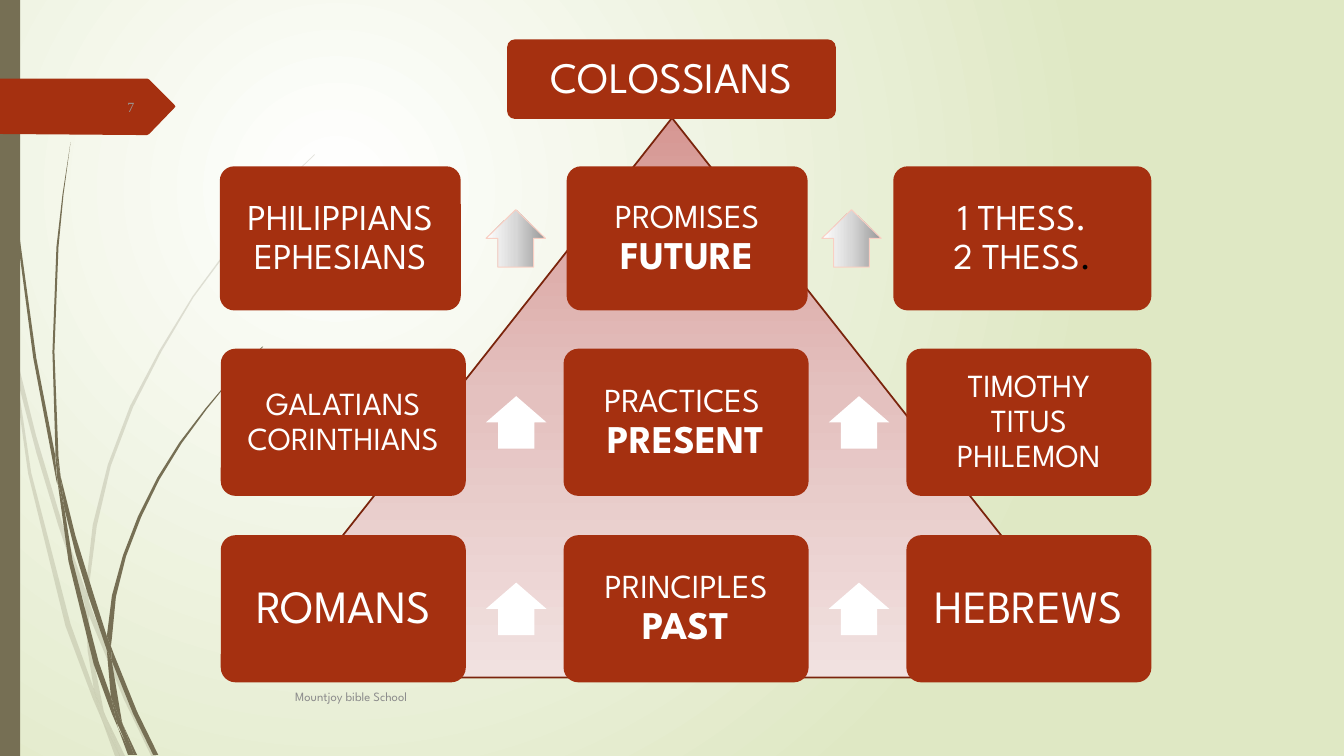
from dataclasses import dataclass

from lxml.etree import SubElement
from pptx import Presentation
from pptx.dml.color import RGBColor
from pptx.enum.shapes import MSO_SHAPE
from pptx.enum.text import MSO_ANCHOR, PP_ALIGN
from pptx.oxml.ns import qn
from pptx.util import Inches, Pt

RUST = RGBColor(0xA5, 0x30, 0x10)
DARK_RUST = RGBColor(0x7A, 0x24, 0x0C)
PEACH = RGBColor(0xF9, 0xCF, 0xC3)
OLIVE = RGBColor(0x76, 0x6F, 0x54)
WHITE = RGBColor(0xFF, 0xFF, 0xFF)
BLACK = RGBColor(0, 0, 0)
FOOTER_GREY = RGBColor(0x8C, 0x8C, 0x8C)
NUMBER_GREY = RGBColor(0x9B, 0x9A, 0x98)
PALE_GREEN = RGBColor(0xDF, 0xE8, 0xC4)
PINKS = [RGBColor(0xD6, 0x97, 0x93), RGBColor(0xE4, 0xC1, 0xBF), RGBColor(0xF1, 0xE1, 0xE0)]
SILVERS = [RGBColor(0x97, 0x97, 0x97), RGBColor(0xD7, 0xD7, 0xD7), WHITE]
FONT = "League Spartan"

PALE_WISPS = [
    [(0.11, 3.5), (0.09, 3.22), (0, 2.82), (0, 2.99), (0.1, 3.44)],
    [(0.58, 5.22), (0.84, 5.99), (0.85, 5.86), (0.62, 5.2), (0.36, 4.33), (0.14, 3.45),
     (0.17, 3.76), (0.36, 4.49)],
    [(0.92, 6.07), (0.88, 5.96), (0.88, 6.1), (1.23, 6.94), (1.5, 7.5), (1.55, 7.5), (1.27, 6.92)],
    [(1.19, 7.5), (1.24, 7.5), (1.05, 7.11)],
    [(0.93, 6.83), (0.7, 6.19), (0.31, 4.69), (0.17, 3.76), (0.11, 3.5), (0.28, 4.7),
     (0.65, 6.21), (0.92, 6.93), (1.01, 7.14), (0.99, 7.07)],
    [(0.84, 5.99), (0.87, 6.46), (0.93, 6.83), (0.96, 6.92), (1.05, 7.11), (1.03, 7.06),
     (0.91, 6.46), (0.88, 6.1), (0.88, 6.08)],
    [(0.88, 5.84), (0.96, 5.22), (1.1, 4.62), (1.32, 4.04), (1.6, 3.49), (1.92, 2.95),
     (2.29, 2.45), (2.68, 1.98), (2.9, 1.75), (3.12, 1.54), (3.12, 1.53), (2.89, 1.75),
     (2.68, 1.97), (2.28, 2.44), (1.91, 2.94), (1.58, 3.48), (1.29, 4.03), (1.07, 4.61),
     (0.92, 5.21), (0.85, 5.84), (0.85, 5.86), (0.88, 5.96)],
    [(1.01, 7.14), (1.14, 7.5), (1.19, 7.5)],
    [(0.88, 6.08), (0.88, 6.1), (0.88, 5.96), (0.85, 5.86), (0.84, 5.99)],
    [(0.96, 6.92), (0.93, 6.83), (0.99, 7.07), (1.01, 7.14), (1.19, 7.5), (1.05, 7.11)],
]
DARK_WISPS = [
    [(0.07, 1.1), (0.17, 2.33), (0.33, 3.55), (0.56, 4.77), (0.57, 4.81), (0.55, 4.57),
     (0.55, 4.53), (0.36, 3.55), (0.19, 2.32), (0.08, 1.09), (0.05, 0.48), (0.04, 0),
     (0.03, 0), (0.04, 0.48)],
    [(0.88, 5.92), (1.06, 6.45), (1.06, 6.31), (0.93, 5.9), (0.75, 5.32), (0.6, 4.72),
     (0.64, 5.05), (0.75, 5.49)],
    [(1.13, 6.49), (1.1, 6.41), (1.11, 6.56), (1.32, 7.08), (1.52, 7.49), (1.57, 7.49), (1.36, 7.06)],
    [(1.1, 6.91), (0.98, 6.57), (0.72, 5.56), (0.64, 5.05), (0.57, 4.77), (0.68, 5.57),
     (0.93, 6.59), (1.11, 7.08), (1.17, 7.22), (1.16, 7.17)],
    [(0.6, 4.72), (0.58, 4.53), (0.54, 3.49), (0.58, 2.45), (0.63, 1.93), (0.7, 1.41),
     (0.62, 1.93), (0.56, 2.45), (0.52, 3.49), (0.55, 4.49)],
    [(1.33, 7.49), (1.36, 7.49), (1.22, 7.19)],
    [(0.57, 4.77), (0.64, 5.05), (0.6, 4.72), (0.55, 4.49), (0.55, 4.53)],
    [(1.11, 6.33), (1.15, 5.92), (1.25, 5.52), (1.4, 5.13), (1.58, 4.76), (1.8, 4.4),
     (2.05, 4.06), (2.31, 3.74), (2.61, 3.44), (2.6, 3.44), (2.31, 3.73), (2.04, 4.05),
     (1.78, 4.39), (1.56, 4.74), (1.37, 5.12), (1.22, 5.51), (1.11, 5.91), (1.06, 6.31),
     (1.1, 6.41)],
    [(1.17, 7.22), (1.27, 7.49), (1.31, 7.49)],
    [(1.06, 6.45), (1.1, 6.91), (1.16, 7.06), (1.22, 7.19), (1.21, 7.16), (1.11, 6.56)],
    [(1.06, 6.45), (1.11, 6.56), (1.1, 6.41), (1.06, 6.31)],
    [(1.16, 7.06), (1.1, 6.91), (1.16, 7.17), (1.3, 7.49), (1.33, 7.49), (1.22, 7.19)],
]
RIBBON = [(1.74, 1.06), (1.48, 1.33), (1.46, 1.34), (1.36, 1.34), (0, 1.33), (0, 0.78),
          (1.46, 0.78), (1.48, 0.79), (1.73, 1.04)]


@dataclass
class Card:
    """Wording and type size of one card."""
    lines: list
    size: int
    inset: float = 0.1
    emphasis: bool = False
    dark_tail: str = ""


def paint_gradient(fill, element, colors, angle=None):
    """Fill with evenly spaced colours, linear at an angle or radial without one."""
    fill.gradient()
    gradient = element.find(".//" + qn("a:gradFill"))
    for child in list(gradient):
        gradient.remove(child)
    stops = SubElement(gradient, qn("a:gsLst"))
    for index, color in enumerate(colors):
        stop = SubElement(stops, qn("a:gs"), pos=str(index * 100000 // (len(colors) - 1)))
        SubElement(stop, qn("a:srgbClr"), val=str(color))
    if angle is None:
        radial = SubElement(gradient, qn("a:path"), path="circle")
        SubElement(radial, qn("a:fillToRect"), l="50000", t="50000", r="100000", b="100000")
    else:
        SubElement(gradient, qn("a:lin"), ang=str(angle * 60000), scaled="0")


def style(shape, color):
    """Give a shape a plain fill without line or shadow."""
    shape.shadow.inherit = False
    shape.fill.solid()
    shape.fill.fore_color.rgb = color
    shape.line.fill.background()


def add_shape(slide, kind, box, color):
    """Place a plain preset shape in a box given in inches."""
    shape = slide.shapes.add_shape(kind, *map(Inches, box))
    style(shape, color)
    return shape


def add_outline(slide, points, color, opacity=100):
    """Draw a closed outline through points given in inches."""
    corners = [(Inches(x), Inches(y)) for x, y in points]
    builder = slide.shapes.build_freeform(*corners[0])
    builder.add_line_segments(corners[1:], close=True)
    shape = builder.convert_to_shape()
    style(shape, color)
    if opacity < 100:
        tint = shape.element.spPr.find(qn("a:solidFill")).find(qn("a:srgbClr"))
        SubElement(tint, qn("a:alpha"), val=str(opacity * 1000))


def add_label(slide, box, text, font_name, size, color, alignment):
    """Place a small line of text."""
    frame = slide.shapes.add_textbox(*map(Inches, box)).text_frame
    frame.word_wrap = True
    frame.vertical_anchor = MSO_ANCHOR.MIDDLE
    paragraph = frame.paragraphs[0]
    paragraph.text = text
    paragraph.alignment = alignment
    paragraph.font.name = font_name
    paragraph.font.size = Pt(size)
    paragraph.font.color.rgb = color


def add_card(slide, box, card):
    """Place a rounded card with centred lines."""
    shape = add_shape(slide, MSO_SHAPE.ROUNDED_RECTANGLE, box, RUST)
    shape.adjustments[0] = 0.1
    frame = shape.text_frame
    frame.word_wrap = True
    frame.vertical_anchor = MSO_ANCHOR.MIDDLE
    frame.margin_left = frame.margin_right = Inches(card.inset)
    frame.margin_top = frame.margin_bottom = Inches(card.inset)
    paragraph = frame.paragraphs[0]
    paragraph.alignment = PP_ALIGN.CENTER
    paragraph.line_spacing = 0.9
    paragraph.font.name = FONT
    paragraph.font.size = Pt(card.size)
    paragraph.font.color.rgb = WHITE
    for index, line in enumerate(card.lines):
        if index:
            paragraph.add_line_break()
        run = paragraph.add_run()
        run.text = line
    if card.emphasis:
        run.font.bold = True
        run.font.size = Pt(28)
    if card.dark_tail:
        tail = paragraph.add_run()
        tail.text = card.dark_tail
        tail.font.color.rgb = BLACK


def add_row(slide, top, height, columns, arrows, arrow_size, cards, silver=False):
    """Place three cards with an upward arrow centred in height between neighbours."""
    for (left, width), card in zip(columns, cards):
        add_card(slide, (left, top, width, height), card)
    length, breadth = arrow_size
    for left in arrows:
        box = (left, top + (height - breadth) / 2, length, breadth)
        arrow = add_shape(slide, MSO_SHAPE.RIGHT_ARROW, box, WHITE)
        arrow.rotation = 270
        arrow.adjustments[0] = 0.6
        if silver:
            paint_gradient(arrow.fill, arrow.element, SILVERS, 270)
            arrow.line.color.rgb = PEACH
            arrow.line.width = Pt(0.75)


def add_backdrop(slide, height):
    """Draw the background, wisps, side strip and number ribbon."""
    paint_gradient(slide.background.fill, slide.element, [WHITE, PALE_GREEN])
    for wisps, opacity in ((PALE_WISPS, 20), (DARK_WISPS, 100)):
        for points in wisps:
            add_outline(slide, points, OLIVE, opacity)
    add_shape(slide, MSO_SHAPE.RECTANGLE, (0, 0, 0.2, height), OLIVE)
    add_outline(slide, RIBBON, RUST)


def add_pyramid(slide, box):
    """Draw the triangle behind the cards."""
    triangle = add_shape(slide, MSO_SHAPE.ISOSCELES_TRIANGLE, box, PINKS[0])
    paint_gradient(triangle.fill, triangle.element, PINKS, 90)
    triangle.line.color.rgb = DARK_RUST
    triangle.line.width = Pt(1.25)


def main():
    """Build the slide and save it."""
    presentation = Presentation()
    presentation.slide_width, presentation.slide_height = Inches(13.33), Inches(7.5)
    slide = presentation.slides.add_slide(presentation.slide_layouts[6])
    add_backdrop(slide, 7.5)
    add_pyramid(slide, (2.29, 1.17, 8.75, 5.55))
    add_label(slide, (2.83, 6.71, 8.33, 0.4), "Mountjoy bible School", FONT, 9, FOOTER_GREY, PP_ALIGN.LEFT)
    add_label(slide, (0.58, 0.86, 0.85, 0.4), "7", "Times New Roman", 10, NUMBER_GREY, PP_ALIGN.RIGHT)
    add_row(slide, 1.65, 1.43, [(2.18, 2.39), (5.62, 2.39), (8.86, 2.56)], [4.83, 8.16], (0.57, 0.59),
            [Card(["PHILIPPIANS", "EPHESIANS"], 26, 0.11),
             Card(["PROMISES", "FUTURE"], 24, emphasis=True),
             Card(["1 THESS.", "2 THESS"], 26, 0.11, dark_tail=".")], silver=True)
    columns = [(2.19 + 3.4 * index, 2.43) for index in range(3)]
    lower_rows = [
        (3.46, [Card(["GALATIANS", "CORINTHIANS"], 23),
                Card(["PRACTICES ", "PRESENT"], 24, emphasis=True),
                Card(["TIMOTHY", "TITUS", "PHILEMON"], 23)]),
        (5.31, [Card(["ROMANS"], 33, 0.14),
                Card(["PRINCIPLES", "PAST"], 24, emphasis=True),
                Card(["HEBREWS"], 33, 0.14)]),
    ]
    for top, cards in lower_rows:
        add_row(slide, top, 1.46, columns, [4.86, 8.26], (0.52, 0.6), cards)
    add_card(slide, (5.03, 0.39, 3.26, 0.79), Card(["COLOSSIANS"], 31, 0.13))
    presentation.save("out.pptx")


if __name__ == "__main__":
    main()
